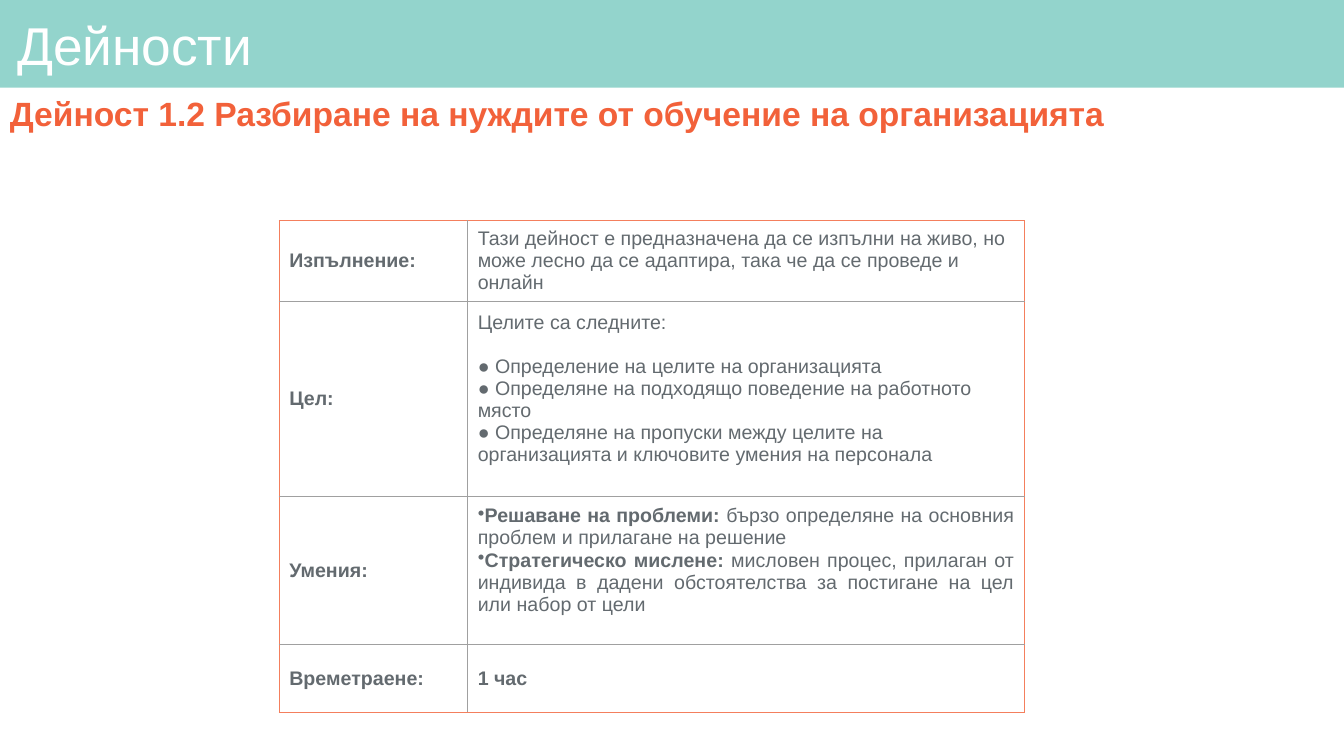
from lxml import etree
from pptx import Presentation
from pptx.dml.color import RGBColor
from pptx.enum.shapes import MSO_SHAPE
from pptx.enum.text import MSO_ANCHOR, PP_ALIGN
from pptx.oxml.ns import qn
from pptx.util import Cm, Pt

MIDDLE = MSO_ANCHOR.MIDDLE
LEFT, JUSTIFY = PP_ALIGN.LEFT, PP_ALIGN.JUSTIFY
RECTANGLE = MSO_SHAPE.RECTANGLE
TEAL, ORANGE, BORDER, GREY, RULE = "93D4CC", "F2613A", "F47F5D", "636A6F", "A0A0A0"


def color(value):
    return RGBColor.from_string(value)


def add_span(para, text, size, value, bold=False):
    span = para.add_run()
    span.text = text
    span.font.name = "Arial"
    span.font.size = Pt(size)
    span.font.bold = bold
    span.font.color.rgb = color(value)


deck = Presentation()
deck.slide_width, deck.slide_height = Cm(33.87), Cm(19.05)
page = deck.slides.add_slide(deck.slide_layouts[6])

banner = page.shapes.add_shape(RECTANGLE, 0, 0, deck.slide_width, Cm(2.21))
banner.shadow.inherit = False
banner.fill.solid()
banner.fill.fore_color.rgb = color(TEAL)
banner.line.fill.background()

headings = [
    ("Дейности", 0.28, 0.23, 1.98, 0.15, 38, "FFFFFF", False, LEFT),
    ("Дейност 1.2 Разбиране на нуждите от обучение на организацията",
     0, 2.16, 1.52, 0.25, 24, ORANGE, True, JUSTIFY),
]
for text, left, top, height, inset, size, value, bold, align in headings:
    box = page.shapes.add_textbox(Cm(left), Cm(top), Cm(33.17), Cm(height))
    frame = box.text_frame
    frame.word_wrap = True
    frame.vertical_anchor = MIDDLE
    frame.margin_left = frame.margin_right = Cm(inset)
    frame.margin_top = frame.margin_bottom = Cm(0.13)
    para = frame.paragraphs[0]
    para.alignment = align
    para.line_spacing = 0.9
    add_span(para, text, size, value, bold)

details = [
    ("Изпълнение:", [
        [("Тази дейност е предназначена да се изпълни на живо, но може лесно "
          "да се адаптира, така че да се проведе и онлайн", False)],
    ]),
    ("Цел:", [
        [("Целите са следните:", False)],
        [("● Определение на целите на организацията", False)],
        [("● Определяне на подходящо поведение на работното място", False)],
        [("● Определяне на пропуски между целите на организацията и ключовите "
          "умения на персонала", False)],
    ]),
    ("Умения:", [
        [("Решаване на проблеми: ", True),
         ("бързо определяне на основния проблем и прилагане на решение", False)],
        [("Стратегическо мислене:", True),
         (" мисловен процес, прилаган от индивида в дадени обстоятелства "
          "за постигане на цел или набор от цели", False)],
    ]),
    ("Времетраене:", [[("1 час", True)]]),
]
column_widths = [4.75, 14.02]
row_heights = [1.94, 4.7, 3.58, 1.7]
last_row, last_column = len(row_heights) - 1, len(column_widths) - 1

table = page.shapes.add_table(
    len(row_heights), len(column_widths), Cm(7.04), Cm(5.56),
    Cm(sum(column_widths)), Cm(sum(row_heights))).table
table.first_row = table.horz_banding = False
for column, width in zip(table.columns, column_widths):
    column.width = Cm(width)

for row_index, (label, paragraphs) in enumerate(details):
    table.rows[row_index].height = Cm(row_heights[row_index])
    for column_index, content in enumerate([[[(label, True)]], paragraphs]):
        cell = table.cell(row_index, column_index)
        cell.vertical_anchor = MIDDLE
        cell.margin_left = cell.margin_right = Cm(0.25)
        cell.margin_top = cell.margin_bottom = Cm(0.13)
        outer_sides = {
            "a:lnL": column_index == 0,
            "a:lnR": column_index == last_column,
            "a:lnT": row_index == 0,
            "a:lnB": row_index == last_row,
        }
        properties = cell._tc.get_or_add_tcPr()
        for side, outer in outer_sides.items():
            line = etree.SubElement(properties, qn(side), w=str(Pt(0.75)))
            fill = etree.SubElement(line, qn("a:solidFill"))
            etree.SubElement(fill, qn("a:srgbClr"), val=BORDER if outer else RULE)
        cell.fill.background()
        for index, spans in enumerate(content):
            frame = cell.text_frame
            para = frame.add_paragraph() if index else frame.paragraphs[0]
            for text, bold in spans:
                add_span(para, text, 14, GREY, bold)

goals, skills = table.cell(1, 1), table.cell(2, 1)
goals.text_frame.paragraphs[1].space_before = Pt(16)
for cell in (goals, skills):
    cell.margin_bottom = Cm(0.65)
for para in skills.text_frame.paragraphs:
    para.alignment = JUSTIFY
    properties = para._p.get_or_add_pPr()
    properties.set("marL", "0")
    properties.set("indent", "0")
    etree.SubElement(properties, qn("a:buChar"), char="•")

deck.save("out.pptx")
